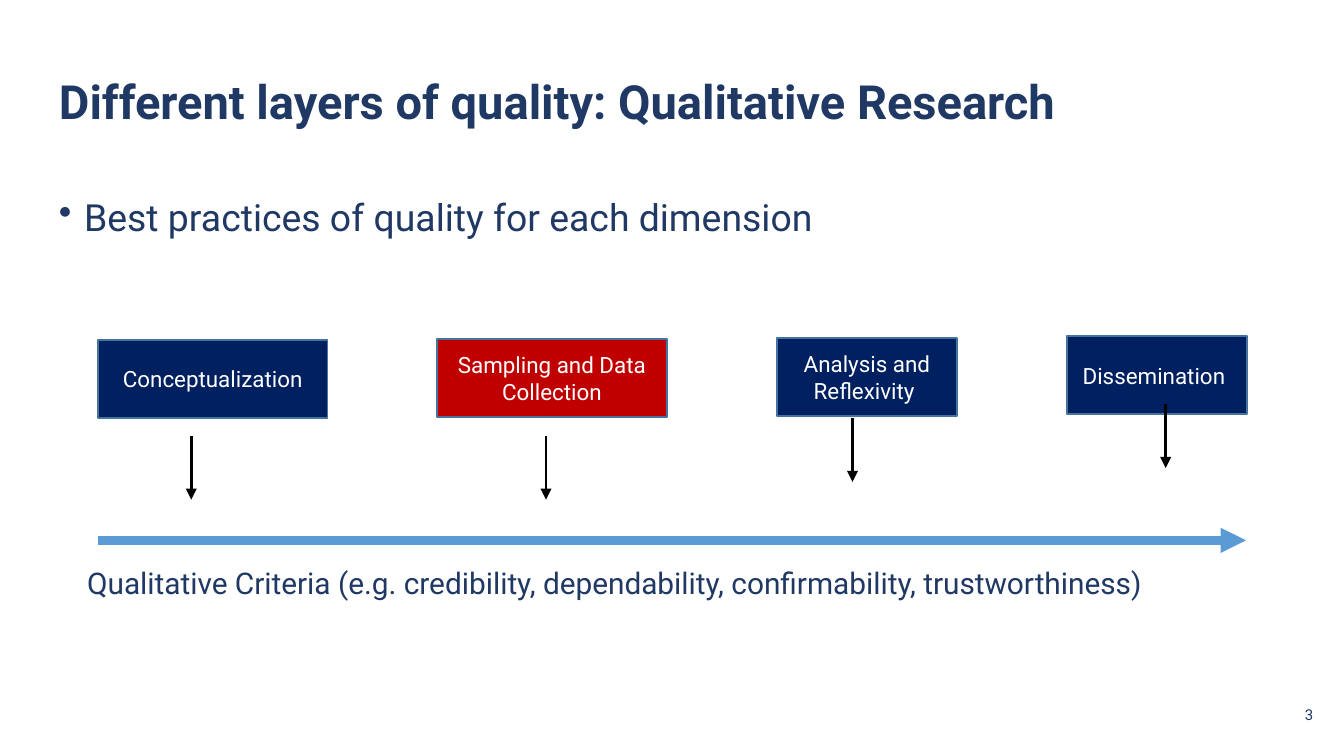
import pptx
import pptx.util
import pptx.dml.color
import pptx.enum.shapes
import pptx.enum.text
import pptx.oxml
import pptx.oxml.ns

Pt = pptx.util.Pt
ALIGN = pptx.enum.text.PP_ALIGN
ANCHOR = pptx.enum.text.MSO_ANCHOR
SHAPE = pptx.enum.shapes.MSO_SHAPE
LINK = pptx.enum.shapes.MSO_CONNECTOR
NAVY, INK, RED = "002060", "203864", "C00000"
EDGE, BLUE, BLACK, WHITE = "43739E", "5B9BD5", "000000", "FFFFFF"


def color(code):
    return pptx.dml.color.RGBColor.from_string(code)


def assign(item, values):
    for name, value in values.items():
        setattr(item, name, value)


def add_xml(parent, tag, attrs=""):
    ns = pptx.oxml.ns.nsdecls("a")
    parent.append(pptx.oxml.parse_xml(f"<a:{tag} {ns} {attrs}/>"))


def write(shape, text, size, hue=INK, bold=False, inset=7.2, side=7.2,
          anchor=ANCHOR.TOP, align=ALIGN.LEFT, space=1.0):
    frame = shape.text_frame
    assign(frame, {
        "word_wrap": True, "vertical_anchor": anchor,
        "margin_left": Pt(side), "margin_right": Pt(side),
        "margin_top": Pt(inset), "margin_bottom": Pt(inset),
    })
    par = frame.paragraphs[0]
    assign(par, {"alignment": align, "line_spacing": space})
    run = par.add_run()
    run.text = text
    assign(run.font, {"name": "Roboto", "size": Pt(size), "bold": bold})
    run.font.color.rgb = color(hue)
    return par


def label(slide, box, text, size, **style):
    shape = slide.shapes.add_textbox(*map(Pt, box))
    return write(shape, text, size, **style)


def arrow(slide, start, end, hue, width):
    line = slide.shapes.add_connector(
        LINK.STRAIGHT, *map(Pt, (*start, *end)))
    line.line.color.rgb = color(hue)
    line.line.width = Pt(width)
    add_xml(line.line._get_or_add_ln(), "tailEnd", 'type="triangle"')
    add_xml(line._element.spPr, "effectLst")


def heading(slide, box):
    label(slide, box, "Different layers of quality: Qualitative Research",
          25.2, bold=True, space=0.9)


def bullet(slide, box):
    par = label(slide, box, "Best practices of quality for each dimension",
                20, space=0.9)
    props = par._p.get_or_add_pPr()
    props.set("marL", str(Pt(13.5)))
    props.set("indent", str(Pt(-13.5)))
    add_xml(props, "buChar", 'char="•"')


def stage(slide, box, text, fill):
    rect = slide.shapes.add_shape(SHAPE.RECTANGLE, *map(Pt, box))
    rect.shadow.inherit = False
    rect.fill.solid()
    rect.fill.fore_color.rgb = color(fill)
    rect.line.color.rgb = color(EDGE)
    rect.line.width = Pt(1)
    write(rect, text, 12, hue=WHITE, inset=3.6,
          anchor=ANCHOR.MIDDLE, align=ALIGN.CENTER)


def process(slide, box):
    left, top, width, height = box
    # Stage: x, y, width, text, fill, then arrow x and y, within the box
    stages = [
        (0, 2, 123, "Conceptualization", NAVY, 50, 53.5),
        (181.7, 1.5, 123, "Sampling and Data Collection", RED, 240, 53.5),
        (363.7, 1, 96.5, "Analysis and Reflexivity ", NAVY, 404.2, 44),
        (519, 0, 96.5, "Dissemination ", NAVY, 572, 36.5),
    ]
    for x, y, wide, text, fill, *_ in stages:
        stage(slide, (left + x, top + y, wide, 42), text, fill)
    # Timeline
    base = top + height
    arrow(slide, (left, base), (left + width, base), BLUE, 4.5)
    # Short arrows below the stages
    for *_, x, y in stages:
        arrow(slide, (left + x, top + y), (left + x, top + y + 34.2),
              BLACK, 1.5)


def caption(slide, box):
    label(slide, box,
          "Qualitative Criteria (e.g. credibility, dependability, "
          "confirmability, trustworthiness)", 16, inset=3.6)


def number(slide, box):
    label(slide, box, "3", 8, anchor=ANCHOR.MIDDLE, align=ALIGN.RIGHT)


def main():
    deck = pptx.Presentation()
    assign(deck, {"slide_width": Pt(720), "slide_height": Pt(405)})
    slide = deck.slides.add_slide(deck.slide_layouts[6])
    heading(slide, (24.5, 35.3, 671, 55.4))
    bullet(slide, (24.5, 99.4, 671, 260))
    number(slide, (667.4, 367.2, 43.2, 31))
    process(slide, (52.5, 180, 615, 109.5))
    caption(slide, (39.6, 298.8, 605.5, 26.6))
    deck.save("out.pptx")


if __name__ == "__main__":
    main()
